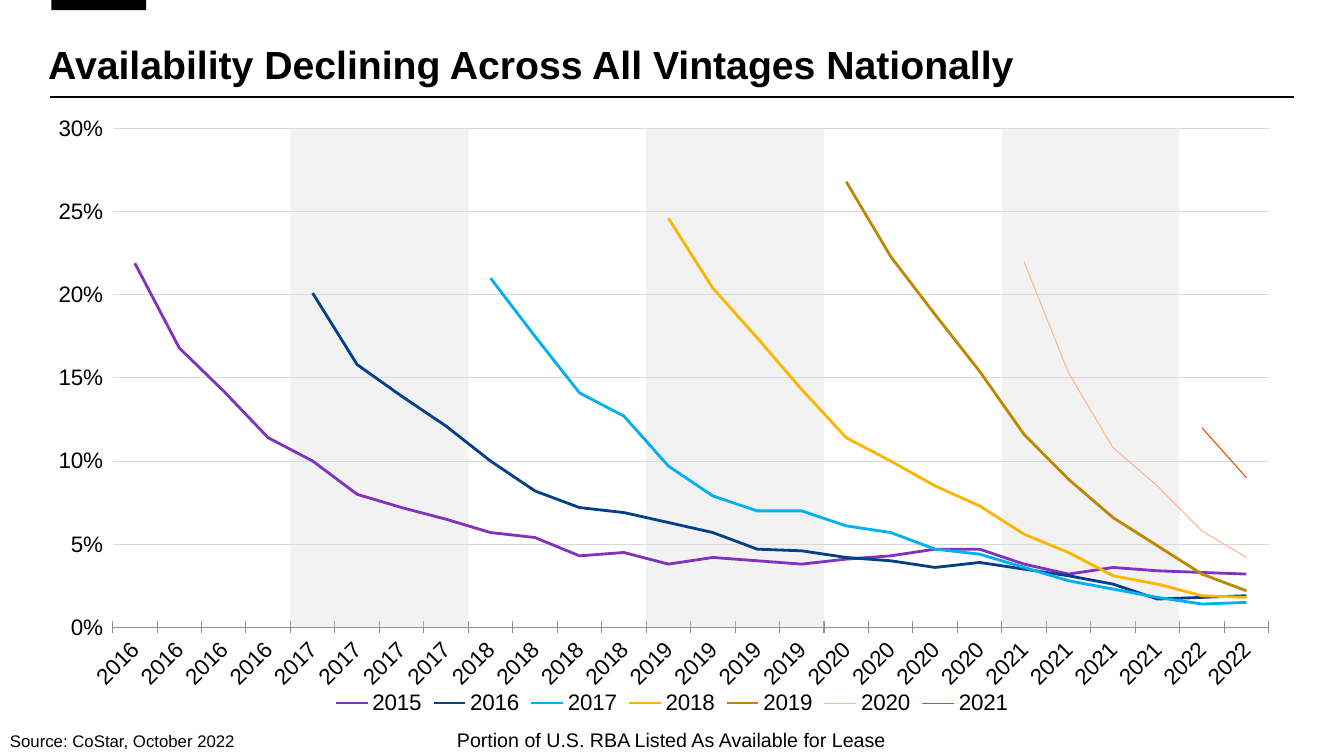
"""Build the slide on declining availability by building vintage."""
from copy import deepcopy

from lxml import etree
from pptx import Presentation
from pptx.chart.data import CategoryChartData
from pptx.dml.color import RGBColor
from pptx.enum.chart import XL_CHART_TYPE, XL_LEGEND_POSITION, XL_MARKER_STYLE, XL_TICK_LABEL_POSITION, XL_TICK_MARK
from pptx.enum.shapes import MSO_CONNECTOR, MSO_SHAPE
from pptx.enum.text import PP_ALIGN
from pptx.oxml import parse_xml
from pptx.oxml.ns import nsdecls, qn
from pptx.util import Inches, Pt

COLUMNS = XL_CHART_TYPE.COLUMN_CLUSTERED
NO_MARKER = XL_MARKER_STYLE.NONE
LEGEND_BOTTOM = XL_LEGEND_POSITION.BOTTOM
LABELS_LOW = XL_TICK_LABEL_POSITION.LOW
TICK_CROSS, TICK_OUTSIDE, TICK_NONE = XL_TICK_MARK.CROSS, XL_TICK_MARK.OUTSIDE, XL_TICK_MARK.NONE
STRAIGHT, RECTANGLE = MSO_CONNECTOR.STRAIGHT, MSO_SHAPE.RECTANGLE
LEFT, CENTER = PP_ALIGN.LEFT, PP_ALIGN.CENTER
BLACK = RGBColor(0x00, 0x00, 0x00)
GRID_GRAY = RGBColor(0xD9, 0xD9, 0xD9)
AXIS_GRAY = RGBColor(0x89, 0x89, 0x89)
FONT = "Arial"
AXIS_MAXIMUM = 0.3

QUARTERS = [42460, 42551, 42643, 42735, 42825, 42916, 43008, 43100, 43190,
            43281, 43373, 43465, 43555, 43646, 43738, 43830, 43921, 44012,
            44104, 44196, 44286, 44377, 44469, 44561, 44651, 44742]
VINTAGES = [
    ("2015", RGBColor(0x80, 0x33, 0xBD), 2,
     [0.219, 0.168, 0.142, 0.114, 0.1, 0.08, 0.072, 0.065, 0.057, 0.054, 0.043, 0.045, 0.038,
      0.042, 0.04, 0.038, 0.041, 0.043, 0.047, 0.047, 0.038, 0.032, 0.036, 0.034, 0.033, 0.032]),
    ("2016", RGBColor(0x04, 0x40, 0x88), 2,
     [0.201, 0.158, 0.139, 0.121, 0.1, 0.082, 0.072, 0.069, 0.063, 0.057, 0.047,
      0.046, 0.042, 0.04, 0.036, 0.039, 0.035, 0.031, 0.026, 0.017, 0.018, 0.019]),
    ("2017", RGBColor(0x00, 0xB0, 0xF0), 2,
     [0.21, 0.175, 0.141, 0.127, 0.097, 0.079, 0.07, 0.07, 0.061,
      0.057, 0.047, 0.044, 0.036, 0.028, 0.023, 0.018, 0.014, 0.015]),
    ("2018", RGBColor(0xFE, 0xB5, 0x00), 2,
     [0.246, 0.204, 0.174, 0.143, 0.114, 0.1, 0.085,
      0.073, 0.056, 0.045, 0.031, 0.026, 0.019, 0.018]),
    ("2019", RGBColor(0xBE, 0x88, 0x00), 2,
     [0.268, 0.223, 0.188, 0.154, 0.116, 0.089, 0.066, 0.049, 0.032, 0.022]),
    ("2020", RGBColor(0xFF, 0xB3, 0x92), 0.75,
     [0.22, 0.153, 0.108, 0.085, 0.058, 0.042]),
    ("2021", RGBColor(0xEE, 0x48, 0x00), 0.75, [0.12, 0.09]),
]


def add_text(slide, left, top, width, height, text, size, alignment=LEFT, bold=False):
    box = slide.shapes.add_textbox(Inches(left), Inches(top), Inches(width), Inches(height))
    box.text_frame.word_wrap = True
    box.text_frame.text = text
    paragraph = box.text_frame.paragraphs[0]
    paragraph.alignment = alignment
    font = paragraph.runs[0].font
    font.name, font.size, font.bold = FONT, Pt(size), bold
    font.color.rgb = BLACK
    return paragraph


def manual_layout(left, top, width, height, target=""):
    return parse_xml(
        f'<c:layout {nsdecls("c")}><c:manualLayout>{target}'
        '<c:xMode val="edge"/><c:yMode val="edge"/>'
        f'<c:x val="{left}"/><c:y val="{top}"/><c:w val="{width}"/><c:h val="{height}"/>'
        '</c:manualLayout></c:layout>')


presentation = Presentation()
presentation.slide_width, presentation.slide_height = Inches(13.33), Inches(7.5)
slide = presentation.slides.add_slide(presentation.slide_layouts[6])

tab = slide.shapes.add_shape(RECTANGLE, Inches(0.51), Inches(0), Inches(0.94), Inches(0.1))
tab.shadow.inherit = False
tab.fill.solid()
tab.fill.fore_color.rgb = BLACK
tab.line.fill.background()

title_rule = slide.shapes.add_connector(
    STRAIGHT, Inches(0.5), Inches(0.96), Inches(12.83), Inches(0.96))
title_rule.line.color.rgb = BLACK
title_rule.line.width = Pt(1.5)
etree.SubElement(title_rule._element.spPr, qn("a:effectLst"))

title = add_text(slide, 0.38, 0.4, 12.45, 0.88,
                 "Availability Declining Across All Vintages Nationally", 28, bold=True)
title.line_spacing = 0.9

chart_data = CategoryChartData(number_format="0%")
chart_data.categories = QUARTERS
chart_data.categories.number_format = "yyyy"
odd_years = [index // 4 % 2 == 1 for index in range(len(QUARTERS))]
chart_data.add_series("Series 1", [AXIS_MAXIMUM if odd else 0 for odd in odd_years])
chart_data.add_series("Series 2", [None if odd else 0 for odd in odd_years])
for name, color, width, values in VINTAGES:
    chart_data.add_series(name, [None] * (len(QUARTERS) - len(values)) + values)
chart = slide.shapes.add_chart(
    COLUMNS, Inches(0.5), Inches(0), Inches(12.33), Inches(7.5), chart_data).chart
chart.has_title = False
chart.font.name, chart.font.size = FONT, Pt(18)
chart.font.color.rgb = BLACK

category_axis, value_axis = chart.category_axis, chart.value_axis
for axis, number_format in ((category_axis, "yyyy"), (value_axis, "0%")):
    labels = axis.tick_labels
    labels.number_format, labels.number_format_is_linked = number_format, False
    labels.font.name, labels.font.size = FONT, Pt(16)
    labels.font.color.rgb = BLACK
category_axis.tick_label_position = LABELS_LOW
category_axis.major_tick_mark = TICK_CROSS
category_axis.minor_tick_mark = TICK_NONE
category_axis.format.line.color.rgb = AXIS_GRAY
category_axis._element.find(qn("c:txPr")).find(qn("a:bodyPr")).set("rot", "-2700000")
for automatic in category_axis._element.findall(qn("c:auto")):
    automatic.set("val", "0")
value_axis.minimum_scale, value_axis.maximum_scale, value_axis.major_unit = 0, AXIS_MAXIMUM, 0.05
value_axis.major_tick_mark = TICK_OUTSIDE
value_axis.format.line.fill.background()
value_axis.major_gridlines.format.line.color.rgb = GRID_GRAY
value_axis.major_gridlines.format.line.width = Pt(0.75)

bands = chart.plots[0]
bands.gap_width, bands.overlap, bands.vary_by_categories = 0, 100, False
band_element = bands._element
line_element = parse_xml(
    f'<c:lineChart {nsdecls("c")}><c:grouping val="standard"/><c:varyColors val="0"/>'
    '<c:marker val="1"/><c:axId val="50010"/><c:axId val="50020"/></c:lineChart>')
line_marker = line_element.find(qn("c:marker"))
for series_element in band_element.findall(qn("c:ser"))[2:]:
    for inversion in series_element.findall(qn("c:invertIfNegative")):
        series_element.remove(inversion)
    line_marker.addprevious(series_element)
band_element.addnext(line_element)

previous_axis = value_axis._element
for axis, own_id, crossed_id in ((category_axis, "50010", "50020"), (value_axis, "50020", "50010")):
    right_axis = deepcopy(axis._element)
    right_axis.find(qn("c:axId")).set("val", own_id)
    right_axis.find(qn("c:crossAx")).set("val", crossed_id)
    for deletion in right_axis.findall(qn("c:delete")):
        right_axis.remove(deletion)
    right_axis.find(qn("c:scaling")).addnext(parse_xml(f'<c:delete {nsdecls("c")} val="1"/>'))
    for gridlines in right_axis.findall(qn("c:majorGridlines")):
        right_axis.remove(gridlines)
    previous_axis.addnext(right_axis)
    previous_axis = right_axis
right_axis.find(qn("c:axPos")).set("val", "r")
right_axis.find(qn("c:crosses")).set("val", "max")

for series in chart.plots[0].series:
    series.format.fill.solid()
    series.format.fill.fore_color.rgb = GRID_GRAY
    for color_element in series._element.spPr.findall(".//" + qn("a:srgbClr")):
        etree.SubElement(color_element, qn("a:alpha")).set("val", "33000")
for series, (name, color, width, values) in zip(chart.plots[1].series, VINTAGES):
    series.smooth = False
    series.marker.style = NO_MARKER
    series.format.line.color.rgb = color
    series.format.line.width = Pt(width)

chart.has_legend = True
legend = chart.legend
legend.position = LEGEND_BOTTOM
legend.include_in_layout = False
legend.font.name, legend.font.size = FONT, Pt(16)
legend.font.color.rgb = BLACK
legend_element = legend._element
for old_layout in legend_element.findall(qn("c:layout")):
    legend_element.remove(old_layout)
legend_position = legend_element.find(qn("c:legendPos"))
legend_position.addnext(manual_layout(0.22, 0.91, 0.56, 0.04))
for index in (1, 0):
    legend_position.addnext(parse_xml(
        f'<c:legendEntry {nsdecls("c")}><c:idx val="{index}"/><c:delete val="1"/></c:legendEntry>'))

plot_area = band_element.getparent()
for old_layout in plot_area.findall(qn("c:layout")):
    plot_area.remove(old_layout)
plot_area.insert(0, manual_layout(0.05, 0.17, 0.93, 0.66, '<c:layoutTarget val="inner"/>'))

add_text(slide, 0, 7.2, 3.41, 0.3, "Source: CoStar, October 2022", 12)
add_text(slide, 4.29, 7.17, 4.74, 0.34,
         "Portion of U.S. RBA Listed As Available for Lease", 14, CENTER)

presentation.save("out.pptx")
